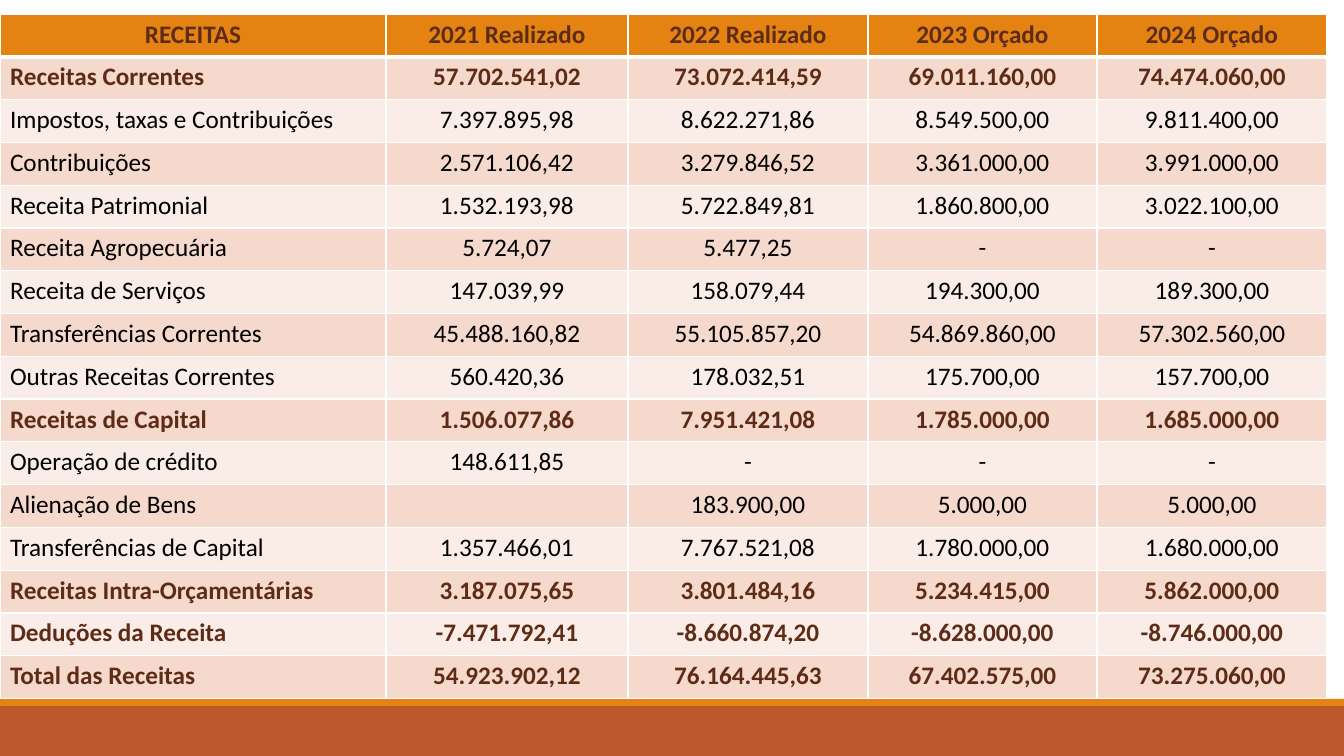
from lxml.etree import SubElement
from pptx import Presentation
from pptx.dml.color import RGBColor
from pptx.enum.shapes import MSO_SHAPE
from pptx.enum.text import PP_ALIGN
from pptx.oxml.ns import qn
from pptx.util import Emu, Pt

EMU_PER_PX = 914400 / 100.8
FONT = "Calibri"
COLORS = {
    "orange": "E48312",
    "rust": "BD582C",
    "brown": "5E2C16",
    "black": "000000",
    "white": "FFFFFF",
    "dark_band": "F5D9CC",
    "light_band": "FAEDE7",
}
COLUMN_WIDTHS = [386, 242, 240, 229, 230]
TABLE_TOP, TABLE_HEIGHT = 14, 685
REVENUES = [
    ["RECEITAS", "2021 Realizado", "2022 Realizado", "2023 Orçado", "2024 Orçado"],
    ["Receitas Correntes", "57.702.541,02", "73.072.414,59", "69.011.160,00", "74.474.060,00"],
    ["Impostos, taxas e Contribuições", "7.397.895,98", "8.622.271,86", "8.549.500,00", "9.811.400,00"],
    ["Contribuições", "2.571.106,42", "3.279.846,52", "3.361.000,00", "3.991.000,00"],
    ["Receita Patrimonial", "1.532.193,98", "5.722.849,81", "1.860.800,00", "3.022.100,00"],
    ["Receita Agropecuária", "5.724,07", "5.477,25", "-", "-"],
    ["Receita de Serviços", "147.039,99", "158.079,44", "194.300,00", "189.300,00"],
    ["Transferências Correntes", "45.488.160,82", "55.105.857,20", "54.869.860,00", "57.302.560,00"],
    ["Outras Receitas Correntes", "560.420,36", "178.032,51", "175.700,00", "157.700,00"],
    ["Receitas de Capital", "1.506.077,86", "7.951.421,08", "1.785.000,00", "1.685.000,00"],
    ["Operação de crédito", "148.611,85", "-", "-", "-"],
    ["Alienação de Bens", "", "183.900,00", "5.000,00", "5.000,00"],
    ["Transferências de Capital", "1.357.466,01", "7.767.521,08", "1.780.000,00", "1.680.000,00"],
    ["Receitas Intra-Orçamentárias", "3.187.075,65", "3.801.484,16", "5.234.415,00", "5.862.000,00"],
    ["Deduções da Receita", "-7.471.792,41", "-8.660.874,20", "-8.628.000,00", "-8.746.000,00"],
    ["Total das Receitas", "54.923.902,12", "76.164.445,63", "67.402.575,00", "73.275.060,00"],
]
BOLD_ROWS = {0, 1, 9, 13, 14, 15}


def px(length):
    return Emu(round(length * EMU_PER_PX))


def color(name):
    return RGBColor.from_string(COLORS[name])


def add_band(slide, top, height, fill):
    shape = slide.shapes.add_shape(MSO_SHAPE.RECTANGLE, 0, px(top), px(1344), px(height))
    shape.shadow.inherit = False
    shape.fill.solid()
    shape.fill.fore_color.rgb = color(fill)
    shape.line.fill.background()


def set_borders(cell, widths):
    properties = cell._tc.get_or_add_tcPr()
    for position, (side, width) in enumerate(widths.items()):
        line = SubElement(properties, qn(f"a:{side}"), w=str(Pt(width)))
        fill = SubElement(line, qn("a:solidFill"))
        SubElement(fill, qn("a:srgbClr"), val=COLORS["white"])
        properties.remove(line)
        properties.insert(position, line)


def format_cell(cell, text, row, column):
    bold = row in BOLD_ROWS
    cell.fill.solid()
    band = "orange" if row == 0 else "dark_band" if row % 2 else "light_band"
    cell.fill.fore_color.rgb = color(band)
    set_borders(cell, {
        "lnL": 1,
        "lnR": 1,
        "lnT": 3 if row == 1 else 1,
        "lnB": 3 if row == 0 else 1,
    })
    cell.text_frame.text = text
    paragraph = cell.text_frame.paragraphs[0]
    paragraph.alignment = PP_ALIGN.LEFT if column == 0 and row else PP_ALIGN.CENTER
    for run in paragraph.runs:
        run.font.name = FONT
        run.font.size = Pt(18)
        run.font.bold = bold
        run.font.color.rgb = color("brown" if bold else "black")


def add_revenue_table(slide):
    frame = slide.shapes.add_table(
        len(REVENUES), len(COLUMN_WIDTHS),
        0, px(TABLE_TOP), px(sum(COLUMN_WIDTHS)), px(TABLE_HEIGHT),
    )
    table = frame.table
    for column, width in zip(table.columns, COLUMN_WIDTHS):
        column.width = px(width)
    for row in table.rows:
        row.height = px(TABLE_HEIGHT / len(REVENUES))
    for row, texts in enumerate(REVENUES):
        for column, text in enumerate(texts):
            format_cell(table.cell(row, column), text, row, column)


def main():
    presentation = Presentation()
    presentation.slide_width = px(1344)
    presentation.slide_height = px(756)
    slide = presentation.slides.add_slide(presentation.slide_layouts[6])
    add_band(slide, 706, 50, "rust")
    add_band(slide, 699, 7, "orange")
    add_revenue_table(slide)
    presentation.save("out.pptx")


if __name__ == "__main__":
    main()
